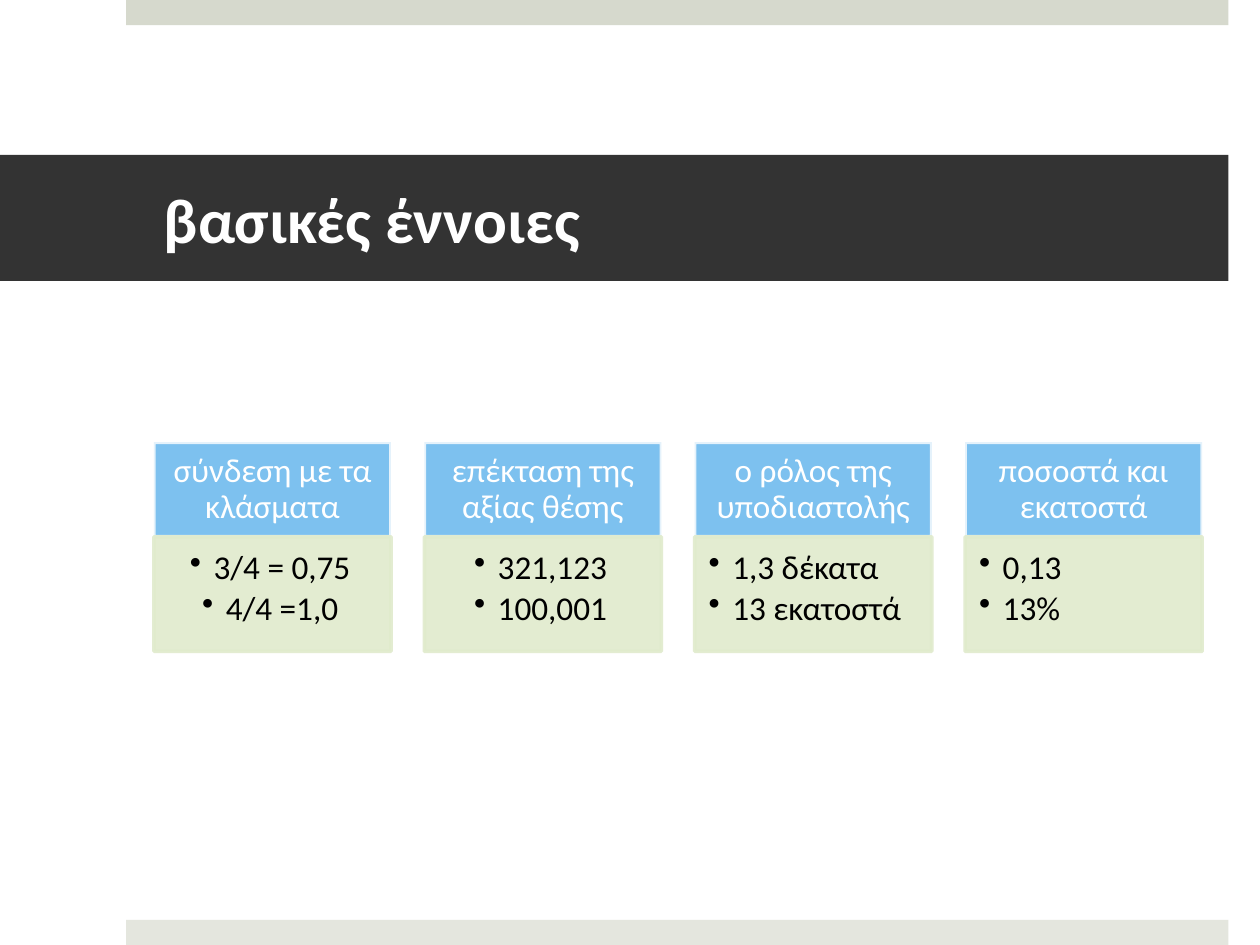
from lxml import etree
from pptx import Presentation
from pptx.dml.color import RGBColor
from pptx.enum import shapes, text
from pptx.oxml import ns
from pptx.util import Pt

LEFT, CENTER = text.PP_ALIGN.LEFT, text.PP_ALIGN.CENTER
TOP, MIDDLE = text.MSO_ANCHOR.TOP, text.MSO_ANCHOR.MIDDLE


def add_box(left, top, width, height, fill, line=None, fill_alpha=100, line_alpha=100):
    """Add a flat rectangle; alphas are opacities in percent."""
    shape = slide.shapes.add_shape(
        shapes.MSO_SHAPE.RECTANGLE, Pt(left), Pt(top), Pt(width), Pt(height))
    shape.shadow.inherit = False
    shape.fill.solid()
    shape.fill.fore_color.rgb = RGBColor.from_string(fill)
    if line:
        shape.line.width = Pt(2)
        shape.line.color.rgb = RGBColor.from_string(line)
    else:
        shape.line.fill.background()
    properties = shape._element.spPr
    for parent, alpha in (("a:solidFill", fill_alpha), ("a:ln/a:solidFill", line_alpha)):
        if alpha < 100:
            color = properties.find(f"{parent}/a:srgbClr", ns.namespaces("a"))
            etree.SubElement(color, ns.qn("a:alpha"), val=str(alpha * 1000))
    return shape


def write(shape, lines, size=19, color="FFFFFF", bold=False, align=CENTER, anchor=MIDDLE,
          margins=(11, 6, 11, 6), spacing=0.9, after=0, bullet=False):
    """Fill the shape with one paragraph per line; margins run left, top, right, bottom."""
    frame = shape.text_frame
    frame.word_wrap = True
    frame.vertical_anchor = anchor
    (frame.margin_left, frame.margin_top,
     frame.margin_right, frame.margin_bottom) = map(Pt, margins)
    for index, line in enumerate(lines):
        paragraph = frame.add_paragraph() if index else frame.paragraphs[0]
        paragraph.alignment = align
        paragraph.line_spacing = spacing
        paragraph.space_after = Pt(after)
        run = paragraph.add_run()
        run.text = line
        run.font.name = "Calibri"
        run.font.size = Pt(size)
        run.font.bold = bold
        run.font.color.rgb = RGBColor.from_string(color)
        if bullet:
            paragraph.level = 1
            properties = paragraph._p.get_or_add_pPr()
            properties.set("marL", str(Pt(13.5)))
            properties.set("indent", str(-Pt(13.5)))
            etree.SubElement(properties, ns.qn("a:buChar"), char="•")


presentation = Presentation()
presentation.slide_width, presentation.slide_height = Pt(720), Pt(540)
slide = presentation.slides.add_slide(presentation.slide_layouts[6])

# Edge bars and title band
add_box(72, 0, 630, 14.4, "D6D9CD")
add_box(72, 525.6, 630, 14.4, "E4E6DE")
title = add_box(0, 88.5, 702, 72, "333333")
write(title, ["βασικές έννοιες"], size=36, bold=True, align=LEFT,
      margins=(93.6, 3.6, 21.6, 3.6), spacing=1.0)

# Concept columns: heading above its examples
columns = [
    ("σύνδεση με τα κλάσματα", ["3/4 = 0,75", "4/4 =1,0"], CENTER),
    ("επέκταση της αξίας θέσης", ["321,123", "100,001"], CENTER),
    ("ο ρόλος της υποδιαστολής", ["1,3 δέκατα", "13 εκατοστά"], LEFT),
    ("ποσοστά και εκατοστά", ["0,13", "13%"], LEFT),
]
first_left, pitch, width = 88, 154.5, 135.5
heading_top, heading_height, body_height = 252.7, 54, 65.5

for index, (heading, examples, align) in enumerate(columns):
    left = first_left + index * pitch
    header = add_box(left, heading_top, width, heading_height, "7DC1EF",
                     line="FFFFFF", line_alpha=80)
    write(header, [heading])
    body = add_box(left, heading_top + heading_height, width, body_height, "E0EBCC",
                   line="E0EBCC", fill_alpha=90, line_alpha=90)
    write(body, examples, color="000000", align=align, anchor=TOP,
          margins=(8, 8, 10.7, 12), after=2.85, bullet=True)

presentation.save("out.pptx")
